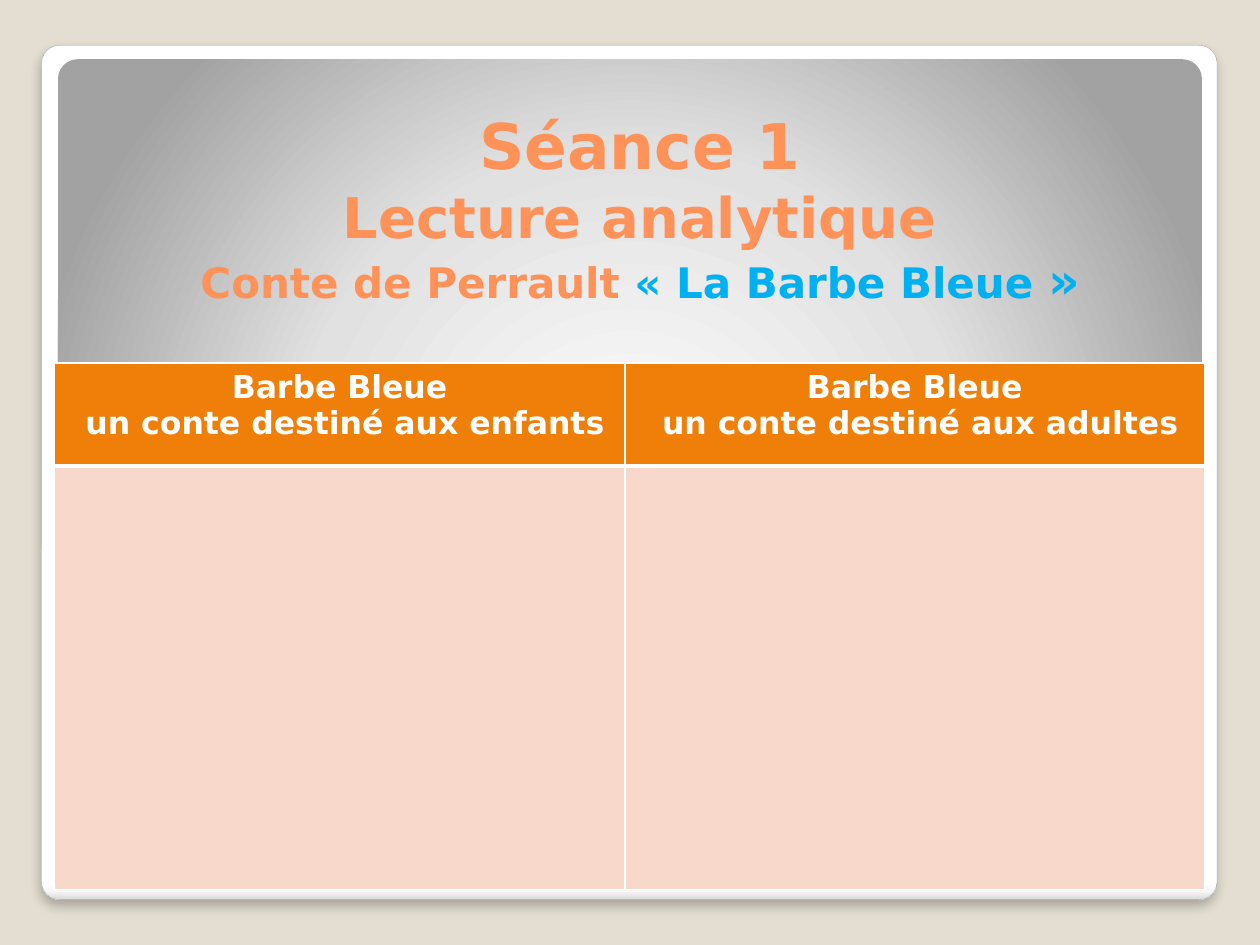
from lxml import etree
from pptx import Presentation
from pptx.dml.color import RGBColor
from pptx.enum.shapes import MSO_SHAPE
from pptx.enum.text import MSO_ANCHOR, MSO_AUTO_SIZE, PP_ALIGN
from pptx.oxml.ns import qn
from pptx.util import Inches, Pt

ROUND = MSO_SHAPE.ROUNDED_RECTANGLE
CENTER = PP_ALIGN.CENTER
MIDDLE = MSO_ANCHOR.MIDDLE
FONT = "DejaVu Sans"
WHITE, ORANGE, PINK = "FFFFFF", "F07F09", "F9D8CC"
CORAL, BLUE = "FF9258", "00B0F0"


def color(code):
    return RGBColor.from_string(code)


def add_node(parent, tag, **attrs):
    node = etree.SubElement(parent, qn(tag))
    for name, value in attrs.items():
        node.set(name, str(value))
    return node


def add_run(para, text, size, code):
    run = para.add_run()
    run.text = text
    font = run.font
    font.name, font.size, font.bold = FONT, Pt(size), True
    font.color.rgb = color(code)


def add_panel(slide, box, adjust, stops):
    """Add a rounded panel; return it with its gradient node."""
    panel = slide.shapes.add_shape(ROUND, *map(Inches, box))
    panel.adjustments[0] = adjust
    panel.shadow.inherit = False
    panel.line.fill.background()
    props = panel._element.spPr
    grad = add_node(props, "a:gradFill", rotWithShape=1)
    props.find(qn("a:prstGeom")).addnext(grad)
    group = add_node(grad, "a:gsLst")
    for place, code in stops:
        stop = add_node(group, "a:gs", pos=place * 1000)
        add_node(stop, "a:srgbClr", val=code)
    return panel, grad


def add_frame(slide):
    # White card with a soft shadow
    card, grad = add_panel(slide, (0.33, 0.36, 9.33, 6.78), 0.021,
                           [(0, WHITE), (98, WHITE), (99, "F7F7F7"), (100, "DADADA")])
    add_node(grad, "a:lin", ang=90 * 60000, scaled=0)
    card.line.color.rgb = color("A4A4A4")
    card.line.width = Pt(0.16)
    effect = card._element.spPr.find(qn("a:effectLst"))
    shadow = add_node(effect, "a:outerShdw", blurRad=Pt(6), dist=Pt(4),
                      dir=90 * 60000, algn="t", rotWithShape=0)
    tint = add_node(shadow, "a:srgbClr", val="000000")
    add_node(tint, "a:alpha", val=25000)

    # Grey banner lit from below
    _, grad = add_panel(slide, (0.46, 0.47, 9.08, 3.4), 0.046,
                        [(0, WHITE), (55, "E1E1E1"), (100, "A2A2A2")])
    path = add_node(grad, "a:path", path="circle")
    add_node(path, "a:fillToRect", l=50000, t=175000, r=50000, b=-75000)


def add_title(slide, box, lines):
    title = slide.shapes.title
    slide.shapes._spTree.append(title._element)  # bring above the panels
    title.left, title.top, title.width, title.height = map(Inches, box)
    frame = title.text_frame
    frame.auto_size = MSO_AUTO_SIZE.NONE
    frame.word_wrap = True
    frame.vertical_anchor = MIDDLE
    frame.margin_left = frame.margin_right = Inches(0.05)
    frame.margin_top = frame.margin_bottom = Inches(0.05)
    para = frame.paragraphs[0]
    para.alignment = CENTER
    for index, line in enumerate(lines):
        if index:
            para.add_line_break()
        for text, size, code in line:
            add_run(para, text, size, code)


def style_cell(cell, fill, base):
    cell.fill.solid()
    cell.fill.fore_color.rgb = color(fill)
    props = cell._tc.get_or_add_tcPr()
    sides = {"a:lnL": 1, "a:lnR": 1, "a:lnT": 1, "a:lnB": base}
    for index, (tag, width) in enumerate(sides.items()):
        edge = add_node(props, tag, w=Pt(width))
        props.insert(index, edge)  # borders come before the fill
        paint = add_node(edge, "a:solidFill")
        add_node(paint, "a:srgbClr", val=WHITE)


def add_grid(slide, left, top, widths, heights, heads):
    area = map(Inches, (left, top, sum(widths), sum(heights)))
    table = slide.shapes.add_table(len(heights), len(widths), *area).table
    for row, height in zip(table.rows, heights):
        row.height = Inches(height)
    for index, (width, lines) in enumerate(zip(widths, heads)):
        table.columns[index].width = Inches(width)
        head = table.cell(0, index)
        style_cell(head, ORANGE, 3)
        style_cell(table.cell(1, index), PINK, 1)
        frame = head.text_frame
        for number, text in enumerate(lines):
            para = frame.add_paragraph() if number else frame.paragraphs[0]
            para.alignment = CENTER
            add_run(para, text, 18, WHITE)


def main():
    deck = Presentation()
    deck.slide_width, deck.slide_height = Inches(10), Inches(7.5)
    slide = deck.slides.add_slide(deck.slide_layouts[5])
    slide.background.fill.solid()
    slide.background.fill.fore_color.rgb = color("E3DED1")

    add_frame(slide)
    add_title(slide, (0.83, 0.7, 8.5, 1.89), [
        [("Séance 1", 36, CORAL)],
        [(" Lecture analytique ", 32, CORAL)],
        [("Conte de Perrault ", 24, CORAL),
         ("« La Barbe Bleue ", 24, BLUE), ("»", 28, BLUE)],
    ])
    # Two readings of the tale
    add_grid(slide, 0.43, 2.88, (4.53, 4.6), (0.82, 3.36), [
        ("Barbe Bleue", f" un conte destiné aux {readers}")
        for readers in ("enfants", "adultes")
    ])
    deck.save("out.pptx")


if __name__ == "__main__":
    main()
